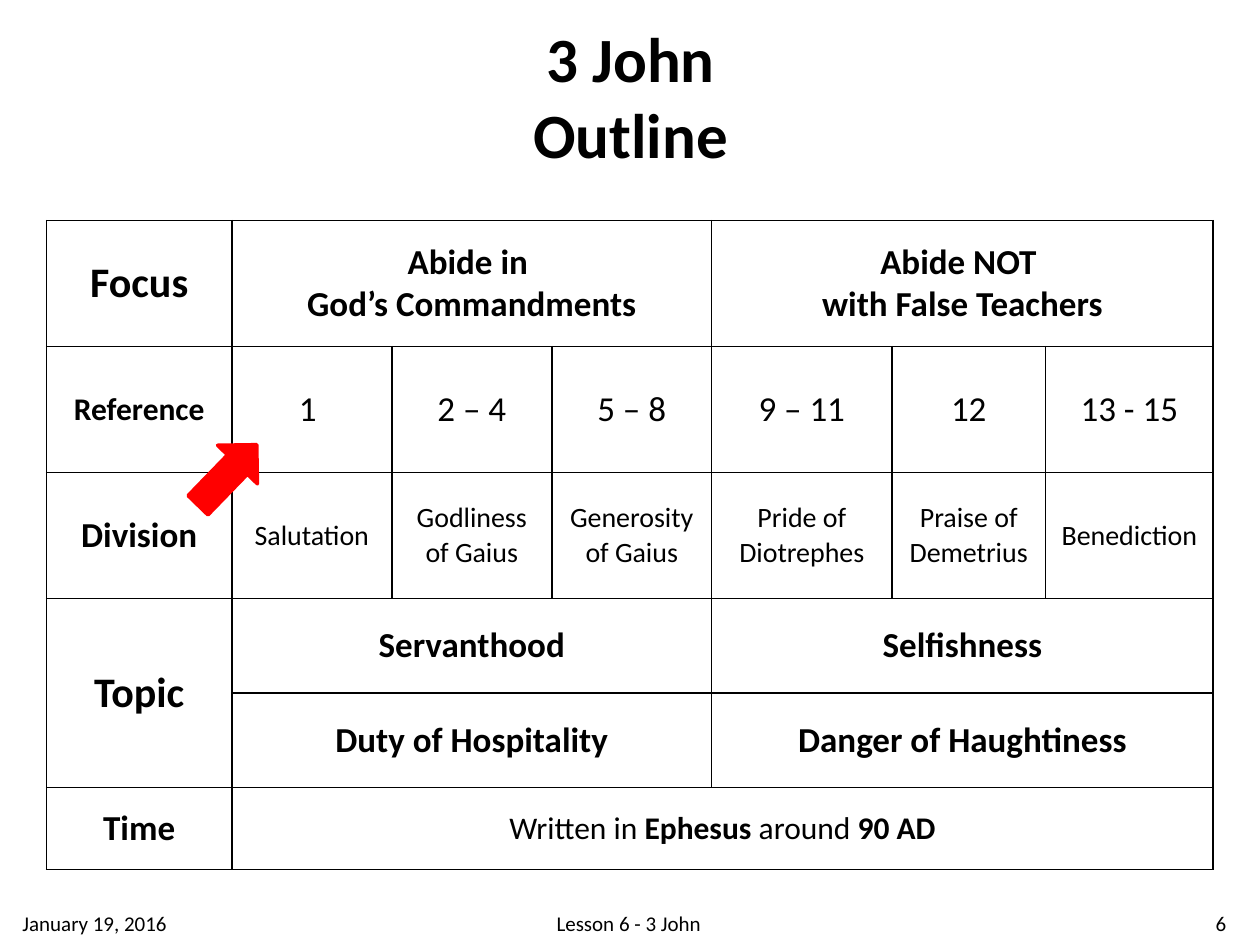
from lxml.etree import SubElement
from pptx import Presentation
from pptx.dml.color import RGBColor
from pptx.enum.shapes import MSO_SHAPE as Shape
from pptx.enum.text import MSO_ANCHOR as Anchor, MSO_AUTO_SIZE as AutoSize, PP_ALIGN as Align
from pptx.oxml.ns import qn
from pptx.util import Emu, Pt

PX = 9144  # 100 px to the inch
FONT = "Calibri"
COLORS = {"ink": "000000", "paper": "FFFFFF", "arrow": "FF0000"}

COLUMNS = [147, 127, 127, 127, 143, 122, 133]
ROWS = [100, 100, 100, 75, 75, 65]
REFERENCES = ["1 ", "2 – 4", "5 – 8", "9 – 11", "12", "13 - 15"]
DIVISIONS = ["Salutation", "Godliness of Gaius", "Generosity of Gaius",
             "Pride of Diotrephes", "Praise of Demetrius", "Benediction"]
# Row headings: row, text, size, rows covered
HEADINGS = [(0, "Focus", 24, 1), (1, "Reference", 18, 1), (2, "Division", 20, 1),
            (3, "Topic", 24, 2), (5, "Time", 20, 1)]
# Row, then the paragraphs of its left and right half
HALVES = [(0, ["Abide in ", "God’s Commandments"], ["Abide NOT ", "with False Teachers"]),
          (3, ["Servanthood"], ["Selfishness"]),
          (4, ["Duty of Hospitality"], ["Danger of Haughtiness"])]
TIME_RUNS = [("Written in ", False), ("Ephesus ", True), ("around ", False), ("90 AD", True)]


def px(n):
    return Emu(n * PX)


def rgb(name):
    return RGBColor.from_string(COLORS[name])


def write(tf, paragraphs, size, align=Align.CENTER):
    """Fill a text frame; each paragraph is a list of (text, bold) runs."""
    for i, runs in enumerate(paragraphs):
        p = tf.paragraphs[0] if i == 0 else tf.add_paragraph()
        p.alignment = align
        for text, bold in runs:
            r = p.add_run()
            r.text = text
            r.font.name, r.font.size, r.font.bold = FONT, Pt(size), bold
            r.font.color.rgb = rgb("ink")


def add_title(s, lines):
    title = s.shapes.title
    title.left, title.top, title.width, title.height = map(px, (412, 10, 177, 131))
    tf = title.text_frame
    tf.word_wrap = False
    tf.auto_size = AutoSize.SHAPE_TO_FIT_TEXT
    tf.vertical_anchor = Anchor.MIDDLE
    write(tf, [[(line, True)] for line in lines], 36)


def add_footer(s, left, width, text, align):
    tf = s.shapes.add_textbox(px(left), px(713), px(width), px(40)).text_frame
    tf.word_wrap = True
    tf.vertical_anchor = Anchor.MIDDLE
    write(tf, [[(text, False)]], 12, align)


def style_cell(cell):
    tc_pr = cell._tc.get_or_add_tcPr()
    for side in ("a:lnL", "a:lnR", "a:lnT", "a:lnB"):
        ln = SubElement(tc_pr, qn(side), w=str(Pt(1)))
        fill = SubElement(ln, qn("a:solidFill"))
        SubElement(fill, qn("a:srgbClr"), val=COLORS["ink"])
    cell.fill.solid()
    cell.fill.fore_color.rgb = rgb("paper")
    cell.vertical_anchor = Anchor.MIDDLE


def fill_cell(table, row, col, paragraphs, size, rows=1, cols=1):
    cell = table.cell(row, col)
    if rows * cols > 1:
        cell.merge(table.cell(row + rows - 1, col + cols - 1))
    write(cell.text_frame, paragraphs, size)


def add_outline_table(s):
    frame = s.shapes.add_table(len(ROWS), len(COLUMNS), px(37), px(175),
                               px(sum(COLUMNS)), px(sum(ROWS)))
    table = frame.table
    table.first_row = table.horz_banding = False
    for column, width in zip(table.columns, COLUMNS):
        column.width = px(width)
    for row, height in zip(table.rows, ROWS):
        row.height = px(height)
    for cell in table.iter_cells():
        style_cell(cell)

    for row, text, size, rows in HEADINGS:
        fill_cell(table, row, 0, [[(text, True)]], size, rows=rows)
    for row, *halves in HALVES:
        for col, lines in zip((1, 4), halves):
            fill_cell(table, row, col, [[(line, True)] for line in lines], 20, cols=3)
    for row, texts, size in ((1, REFERENCES, 20), (2, DIVISIONS, 16)):
        for col, text in enumerate(texts, 1):
            fill_cell(table, row, col, [[(text, False)]], size)
    fill_cell(table, 5, 1, [TIME_RUNS], 18, cols=6)


def add_arrow(s):
    arrow = s.shapes.add_shape(Shape.RIGHT_ARROW, px(147), px(355), px(67), px(44))
    arrow.rotation = 314.1
    arrow.shadow.inherit = False
    arrow.fill.solid()
    arrow.fill.fore_color.rgb = rgb("arrow")
    arrow.line.color.rgb = rgb("arrow")
    arrow.line.width = Pt(2)


def main():
    prs = Presentation()
    prs.slide_width, prs.slide_height = px(1000), px(750)
    s = prs.slides.add_slide(prs.slide_layouts[5])

    # Heading and outline
    add_title(s, ["3 John", "Outline"])
    add_outline_table(s)

    # Footer line
    add_footer(s, 8, 158, "January 19, 2016", Align.LEFT)
    add_footer(s, 228, 542, "Lesson 6 - 3 John", Align.CENTER)
    add_footer(s, 908, 75, "6", Align.RIGHT)

    # Pointer to the first reference
    add_arrow(s)
    prs.save("out.pptx")


if __name__ == "__main__":
    main()
